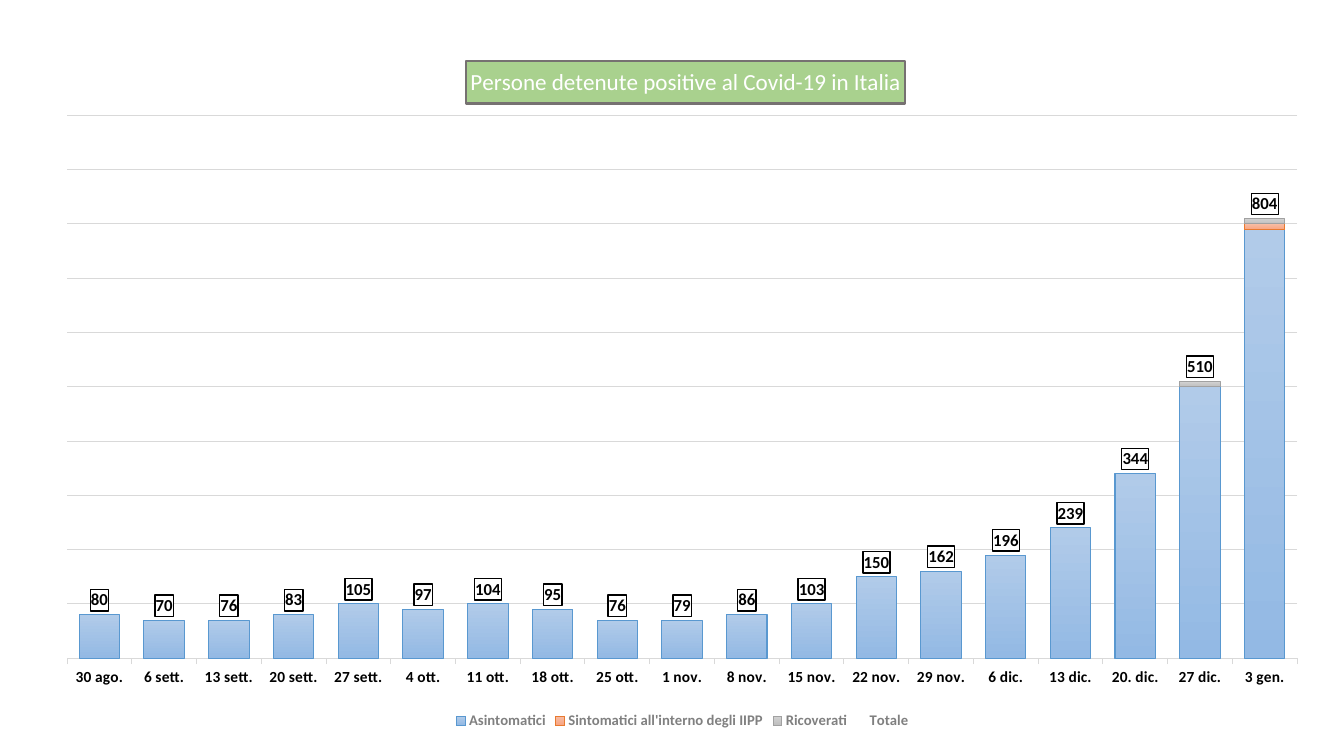
from dataclasses import dataclass

from lxml import etree
from pptx import Presentation
from pptx.chart import data as chart_data
from pptx.dml.color import RGBColor
from pptx.enum import chart as kinds
from pptx.oxml import parse_xml
from pptx.oxml.ns import nsdecls, qn
from pptx.util import Cm, Pt

TITLE = "Persone detenute positive al Covid-19 in Italia"
WEEKS = [
    ("30 ago.", 80, 0, 0, 80), ("6 sett.", 70, 0, 0, 70), ("13 sett.", 70, 0, 0, 76),
    ("20 sett.", 80, 0, 0, 83), ("27 sett.", 100, 0, 0, 105), ("4 ott.", 90, 0, 0, 97),
    ("11 ott.", 100, 0, 0, 104), ("18 ott.", 90, 0, 0, 95), ("25 ott.", 70, 0, 0, 76),
    ("1 nov.", 70, 0, 0, 79), ("8 nov.", 80, 0, 0, 86), ("15 nov.", 100, 0, 0, 103),
    ("22 nov.", 150, 0, 0, 150), ("29 nov.", 160, 0, 0, 162), ("6 dic.", 190, 0, 0, 196),
    ("13 dic.", 240, 0, 0, 239), ("20. dic.", 340, 0, 0, 344), ("27 dic.", 500, 0, 10, 510),
    ("3 gen.", 790, 10, 10, 804),
]
GROUPS = [
    ("Asintomatici", "B1CBE9", "93B9E4", "5998D0"),
    ("Sintomatici all'interno degli IIPP", "F7BDA5", "F8A582", "E87A30"),
    ("Ricoverati", "D2D2D2", "C0C0C0", "A1A1A1"),
]
TOTAL = "Totale"
CHART_WIDTH, CHART_HEIGHT = Cm(32.31), Cm(17.42)


@dataclass(frozen=True)
class Theme:
    font: str = "Calibri"
    black: str = "000000"
    white: str = "FFFFFF"
    grid: str = "D9D9D9"
    legend: str = "808080"
    title_fill: str = "A9D18E"
    title_line: str = "767171"
    title_size: float = 16.5
    label_size: float = 12
    axis_size: float = 11
    legend_size: float = 10.5
    base_size: float = 10
    thin: float = 0.75


THEME = Theme()


def color(code):
    return RGBColor.from_string(code)


def style_font(font, size, code, bold=False):
    font.name = THEME.font
    font.size = Pt(size)
    font.bold = bold
    font.color.rgb = color(code)


def style_line(line, code, width=THEME.thin):
    line.color.rgb = color(code)
    line.width = Pt(width)


def place(parent, index, **position):
    for old in parent.findall(qn("c:layout")):
        parent.remove(old)
    layout = parse_xml(f"<c:layout {nsdecls('c')}><c:manualLayout/></c:layout>")
    spans = {"x": CHART_WIDTH, "y": CHART_HEIGHT, "w": CHART_WIDTH, "h": CHART_HEIGHT}
    for tag, value in position.items():
        share = value / spans[tag] if tag in spans else value
        etree.SubElement(layout[0], qn(f"c:{tag}")).set("val", str(share))
    parent.insert(index, layout)


def style_title(chart):
    title = chart.chart_title
    title.text_frame.text = TITLE
    style_font(title.text_frame.paragraphs[0].runs[0].font, THEME.title_size, THEME.white)
    title.format.fill.solid()
    title.format.fill.fore_color.rgb = color(THEME.title_fill)
    style_line(title.format.line, THEME.title_line, 1.5)
    title.include_in_layout = False
    place(chart._chartSpace.chart.find(qn("c:title")), 1,
          xMode="edge", yMode="edge", x=Cm(10.71), y=Cm(0.47))


def style_axes(chart):
    weeks = chart.category_axis
    style_font(weeks.tick_labels.font, THEME.axis_size, THEME.black, True)
    style_line(weeks.format.line, THEME.grid)
    weeks.major_tick_mark = kinds.XL_TICK_MARK.OUTSIDE
    people = chart.value_axis
    people.minimum_scale, people.maximum_scale = 0, 1000
    people.major_unit = 100
    people.has_major_gridlines = True
    style_line(people.major_gridlines.format.line, THEME.grid)
    people.visible = False


def style_total(series):
    series.format.fill.background()
    series.format.line.fill.background()
    labels = series.data_labels
    labels.show_value = True
    labels.position = kinds.XL_LABEL_POSITION.INSIDE_BASE
    style_font(labels.font, THEME.label_size, THEME.black, True)
    frame = parse_xml(
        f"<c:spPr {nsdecls('c', 'a')}>"
        f'<a:solidFill><a:srgbClr val="{THEME.white}"/></a:solidFill>'
        f'<a:ln w="{Pt(1)}"><a:solidFill><a:srgbClr val="{THEME.black}"/>'
        "</a:solidFill></a:ln></c:spPr>")
    labels._element.find(qn("c:txPr")).addprevious(frame)


def style_series(plot):
    plot.gap_width, plot.overlap = 60, 100
    plot.vary_by_categories = False
    *parts, total = plot.series
    for series, (_, top, bottom, edge) in zip(parts, GROUPS):
        fill = series.format.fill
        fill.gradient()
        fill.gradient_angle = 270
        for stop, code in zip(fill.gradient_stops, (top, bottom)):
            stop.color.rgb = color(code)
        style_line(series.format.line, edge)
    style_total(total)


def main():
    deck = Presentation()
    deck.slide_width, deck.slide_height = Cm(33.87), Cm(19.05)
    page = deck.slides.add_slide(deck.slide_layouts[6])

    cases = chart_data.CategoryChartData()
    dates, *counts = zip(*WEEKS)
    cases.categories = dates
    names = [group[0] for group in GROUPS] + [TOTAL]
    for name, values in zip(names, counts):
        cases.add_series(name, values)

    chart = page.shapes.add_chart(
        kinds.XL_CHART_TYPE.COLUMN_STACKED,
        Cm(1.04), Cm(1.07), CHART_WIDTH, CHART_HEIGHT, cases).chart
    style_font(chart.font, THEME.base_size, THEME.black)
    style_title(chart)
    style_axes(chart)
    style_series(chart.plots[0])
    chart.has_legend = True
    chart.legend.position = kinds.XL_LEGEND_POSITION.BOTTOM
    chart.legend.include_in_layout = False
    style_font(chart.legend.font, THEME.legend_size, THEME.legend, True)
    place(chart._chartSpace.chart.plotArea, 0, layoutTarget="inner",
          xMode="edge", yMode="edge", x=Cm(0.65), y=Cm(1.84), w=Cm(31), h=Cm(13.68))
    deck.save("out.pptx")


if __name__ == "__main__":
    main()
